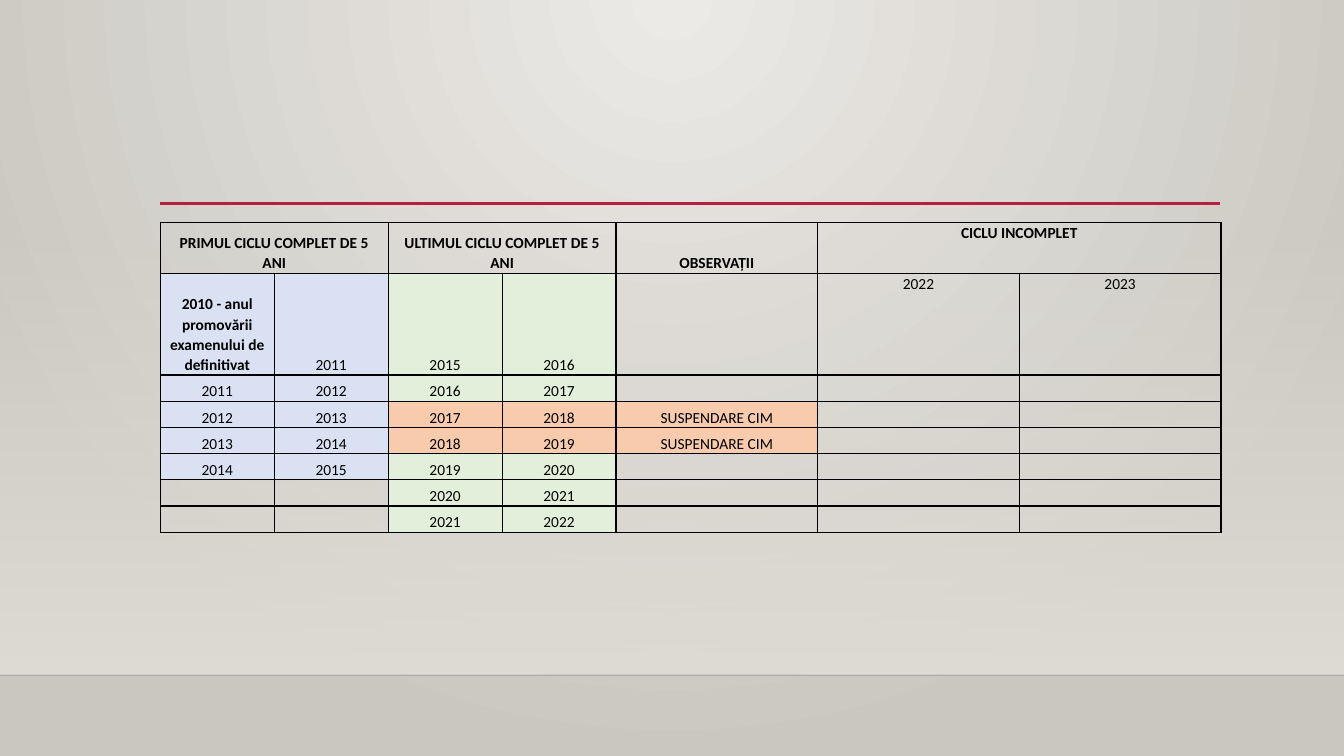
from dataclasses import dataclass
from lxml.etree import SubElement
from pptx import Presentation
from pptx.dml.color import RGBColor
from pptx.enum.shapes import MSO_CONNECTOR as Connector, MSO_SHAPE as Shape
from pptx.enum.text import MSO_ANCHOR as Anchor, PP_ALIGN as Align
from pptx.oxml.ns import qn
from pptx.util import Inches, Pt

# Content: (text, first column, columns spanned)
HEADERS = [
    ("PRIMUL CICLU COMPLET DE 5 ANI", 0, 2),
    ("ULTIMUL CICLU COMPLET DE 5 ANI", 2, 2),
    ("OBSERVAȚII", 4, 1),
    ("CICLU INCOMPLET", 5, 2),
]
FIRST_YEAR = "2010 - anul promovării\nexamenului de definitivat"
ROWS = [
    (FIRST_YEAR, "2011", "2015", "2016", "", "2022", "2023"),
    ("2011", "2012", "2016", "2017", "", "", ""),
    ("2012", "2013", "2017", "2018", "SUSPENDARE CIM", "", ""),
    ("2013", "2014", "2018", "2019", "SUSPENDARE CIM", "", ""),
    ("2014", "2015", "2019", "2020", "", "", ""),
    ("", "", "2020", "2021", "", "", ""),
    ("", "", "2021", "2022", "", "", ""),
]
COLUMN_WIDTHS = [1.13] * 4 + [2] * 3
ROW_HEIGHTS = [0.5, 1.01] + [0.26] * 6
LEFT, TABLE_TOP, RULE_TOP, RIGHT = 1.59, 2.21, 2.02, 12.1
WIDTH, HEIGHT, FLOOR = 13.33, 7.5, 6.7


@dataclass(frozen=True)
class Theme:
    font: str = "Calibri"
    size: float = 11
    line_spacing: float = 1.07
    ink: str = "000000"
    center: str = "ECEAE7"
    edge: str = "CAC7C1"
    wall: str = "DFDBD5"
    floor_line: str = "000001"
    accent: str = "B71E42"
    first_cycle: str = "D9E1F2"
    last_cycle: str = "E2EFDA"
    suspended: str = "F8CBAD"


THEME = Theme()


def rgb(value):
    return RGBColor.from_string(value)


def set_gradient(fill, colors):
    fill.gradient()
    for stop, color in zip(fill.gradient_stops, colors):
        stop.color.rgb = rgb(color)


def set_alpha(element, percent):
    color = next(element.iter(qn("a:srgbClr")))
    SubElement(color, qn("a:alpha"), val=str(percent * 1000))


def add_line(slide, left, right, y, color, width):
    line = slide.shapes.add_connector(
        Connector.STRAIGHT, Inches(left), Inches(y), Inches(right), Inches(y))
    line.line.color.rgb = rgb(color)
    line.line.width = Pt(width)
    SubElement(line.element.spPr, qn("a:effectLst"))
    return line


def add_borders(cell):
    properties = cell._tc.get_or_add_tcPr()
    for side in ("lnL", "lnR", "lnT", "lnB"):
        border = SubElement(properties, qn(f"a:{side}"), w=str(Pt(1)))
        solid = SubElement(border, qn("a:solidFill"))
        SubElement(solid, qn("a:srgbClr"), val=THEME.ink)


def format_cell(cell, text="", color=None, bold=False, anchor=Anchor.BOTTOM):
    cell.margin_left = cell.margin_right = Inches(0.07)
    cell.margin_top = cell.margin_bottom = 0
    cell.vertical_anchor = anchor
    add_borders(cell)
    if color:
        cell.fill.solid()
        cell.fill.fore_color.rgb = rgb(color)
    else:
        cell.fill.background()
    frame = cell.text_frame
    for index, line in enumerate(text.split("\n")):
        paragraph = frame.add_paragraph() if index else frame.paragraphs[0]
        paragraph.alignment = Align.CENTER
        paragraph.line_spacing = THEME.line_spacing
        if not line:
            SubElement(paragraph._p, qn("a:endParaRPr"), sz=str(int(THEME.size * 100)))
            continue
        run = paragraph.add_run()
        run.text = line
        run.font.name = THEME.font
        run.font.size = Pt(THEME.size)
        run.font.bold = bold
        run.font.color.rgb = rgb(THEME.ink)


def cell_color(row, column):
    if not row[column] or column > 4:
        return None
    if column < 2:
        return THEME.first_cycle
    return THEME.suspended if row[4] else THEME.last_cycle


def add_background(slide):
    # Radial glow from the top centre
    set_gradient(slide.background.fill, (THEME.center, THEME.edge))
    gradient = next(slide.element.iter(qn("a:gradFill")))
    gradient.remove(gradient.find(qn("a:lin")))
    radial = SubElement(gradient, qn("a:path"), path="circle")
    SubElement(radial, qn("a:fillToRect"), l="43000", t="0", r="43000", b="100000")

    # Wall that fades in downwards, and the floor edge
    wall = slide.shapes.add_shape(
        Shape.RECTANGLE, 0, Inches(TABLE_TOP), Inches(WIDTH), Inches(FLOOR - TABLE_TOP))
    wall.shadow.inherit = False
    wall.line.fill.background()
    set_gradient(wall.fill, (THEME.wall, THEME.wall))
    wall.fill.gradient_angle = 270
    set_alpha(wall.element.spPr, 0)
    floor_line = add_line(slide, 0, WIDTH, FLOOR, THEME.floor_line, 1)
    set_alpha(floor_line.element.spPr, 20)


def add_cycle_table(slide):
    table = slide.shapes.add_table(
        len(ROW_HEIGHTS), len(COLUMN_WIDTHS), Inches(LEFT), Inches(TABLE_TOP),
        Inches(sum(COLUMN_WIDTHS)), Inches(sum(ROW_HEIGHTS))).table
    table.first_row = table.horz_banding = False
    for column, width in zip(table.columns, COLUMN_WIDTHS):
        column.width = Inches(width)
    for row, height in zip(table.rows, ROW_HEIGHTS):
        row.height = Inches(height)

    # Header row
    for text, start, span in HEADERS:
        anchor = Anchor.TOP if start == 5 else Anchor.BOTTOM
        format_cell(table.cell(0, start), text, bold=True, anchor=anchor)
        if span > 1:
            end = table.cell(0, start + span - 1)
            format_cell(end)
            table.cell(0, start).merge(end)

    # Year rows
    for row_index, row in enumerate(ROWS, start=1):
        for column, text in enumerate(row):
            anchor = Anchor.TOP if column > 4 else Anchor.BOTTOM
            format_cell(table.cell(row_index, column), text, cell_color(row, column),
                        bold=text == FIRST_YEAR, anchor=anchor)


def main():
    presentation = Presentation()
    presentation.slide_width = Inches(WIDTH)
    presentation.slide_height = Inches(HEIGHT)
    slide = presentation.slides.add_slide(presentation.slide_layouts[6])
    add_background(slide)
    add_line(slide, LEFT, RIGHT, RULE_TOP, THEME.accent, 2.5)
    add_cycle_table(slide)
    presentation.save("out.pptx")


if __name__ == "__main__":
    main()
